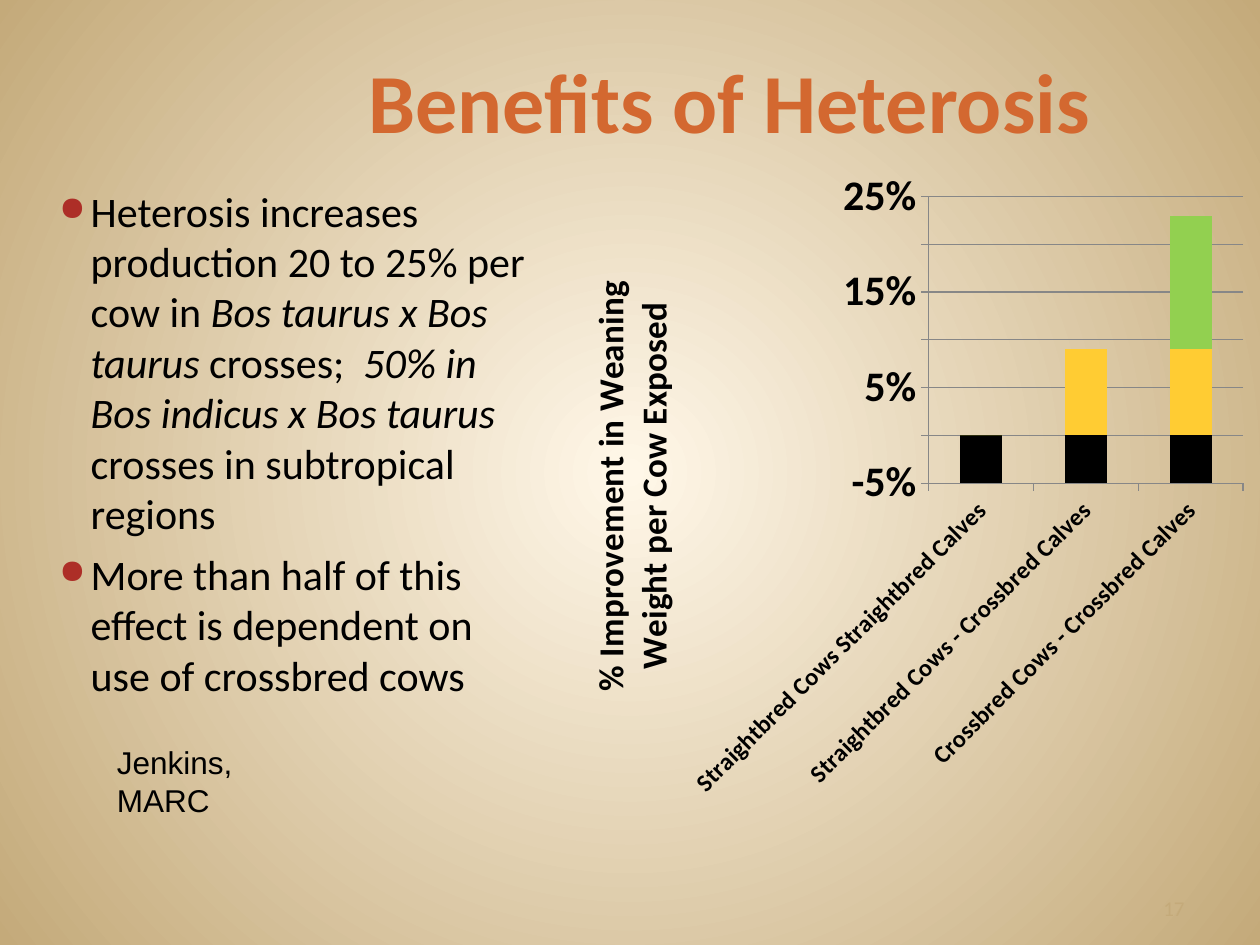
from dataclasses import dataclass

from pptx import Presentation
from pptx.chart.data import CategoryChartData
from pptx.dml.color import RGBColor as RGB
from pptx.enum.chart import XL_AXIS_CROSSES as Crosses
from pptx.enum.chart import XL_CHART_TYPE as ChartType
from pptx.enum.chart import XL_TICK_LABEL_POSITION as LabelPos
from pptx.enum.chart import XL_TICK_MARK as Tick
from pptx.enum.text import MSO_ANCHOR as Anchor
from pptx.enum.text import PP_ALIGN as Align
from pptx.oxml import parse_xml
from pptx.oxml.ns import nsdecls, qn
from pptx.util import Inches, Pt


@dataclass(frozen=True)
class Theme:
    """Colours, fonts and type sizes of the slide."""
    centre: RGB = RGB.from_string("FFF7E8")
    edge: RGB = RGB.from_string("C4AA7A")
    title: RGB = RGB.from_string("D36830")
    text: RGB = RGB.from_string("000000")
    grid: RGB = RGB.from_string("878787")
    bullet: str = "AD2E27"
    font: str = "Calibri"
    source_font: str = "Arial"
    title_size: int = 48
    body_size: int = 24
    source_size: int = 18
    number_size: int = 12
    value_size: int = 24
    axis_title_size: int = 20
    category_size: int = 14


@dataclass(frozen=True)
class Box:
    """A rectangle in inches."""
    x: float
    y: float
    w: float
    h: float

    def emu(self) -> tuple:
        """Return left, top, width and height as lengths."""
        return tuple(Inches(v) for v in (self.x, self.y, self.w, self.h))


@dataclass(frozen=True)
class Span:
    """A stretch of body text, upright or italic."""
    text: str
    italic: bool = False


@dataclass(frozen=True)
class Series:
    """One layer of the stacked columns."""
    name: str
    values: tuple
    color: str


THEME = Theme()
BULLETS = (
    (
        Span("Heterosis increases production 20 to 25% per cow in "),
        Span("Bos taurus x Bos taurus ", True),
        Span("crosses; "),
        Span(" 50% in Bos indicus x Bos taurus ", True),
        Span("crosses in subtropical regions"),
    ),
    (Span("More than half of this effect is dependent on use of crossbred cows"),),
)
CATEGORIES = (
    "Straightbred Cows Straightbred Calves",
    "Straightbred Cows - Crossbred Calves",
    "Crossbred Cows - Crossbred Calves",
)
SERIES = (
    Series("Series 1", (-0.05, -0.05, -0.05), "000000"),
    Series("Series 2", (0, 0.09, 0.09), "FFCC33"),
    Series("Series 3", (0, 0, 0.14), "92D050"),
)


def style_font(font, size: int, color: RGB, name: str = THEME.font, bold: bool = False) -> None:
    """Set the face, size, colour and weight of a font."""
    font.name, font.size, font.bold = name, Pt(size), bold
    font.color.rgb = color


def paint_background(s) -> None:
    """Fill the background with a gradient that spreads from the centre."""
    fill = s.background.fill
    fill.gradient()
    for stop, color, pos in zip(fill.gradient_stops, (THEME.centre, THEME.edge), (0, 1)):
        stop.color.rgb, stop.position = color, pos
    lin = next(s._element.iter(qn("a:lin")))
    lin.getparent().replace(lin, parse_xml(
        f'<a:path {nsdecls("a")} path="circle">'
        '<a:fillToRect l="50000" t="50000" r="50000" b="50000"/></a:path>'))


def add_title(s, text: str, box: Box) -> None:
    """Place and format the title placeholder."""
    sp = s.shapes.title
    sp.left, sp.top, sp.width, sp.height = box.emu()
    tf = sp.text_frame
    tf.vertical_anchor = Anchor.MIDDLE
    p = tf.paragraphs[0]
    p.alignment = Align.CENTER
    r = p.add_run()
    r.text = text
    style_font(r.font, THEME.title_size, THEME.title, bold=True)


def add_label(s, text: str, box: Box, size: int, color: RGB, name: str, align: Align) -> None:
    """Add a small wrapped text box."""
    tf = s.shapes.add_textbox(*box.emu()).text_frame
    tf.word_wrap = True
    p = tf.paragraphs[0]
    p.alignment = align
    r = p.add_run()
    r.text = text
    style_font(r.font, size, color, name)


def add_bullets(s, bullets: tuple, box: Box) -> None:
    """Add the bulleted body text."""
    tf = s.shapes.add_textbox(*box.emu()).text_frame
    tf.word_wrap = True
    tf.margin_left = tf.margin_right = tf.margin_top = tf.margin_bottom = Inches(0.05)
    for i, spans in enumerate(bullets):
        p = tf.add_paragraph() if i else tf.paragraphs[0]
        p.space_after = Pt(6)
        pPr = p._p.get_or_add_pPr()
        pPr.set("marL", str(Inches(0.25)))
        pPr.set("indent", str(Inches(-0.25)))
        for xml in (f'<a:buClr {nsdecls("a")}><a:srgbClr val="{THEME.bullet}"/></a:buClr>',
                    f'<a:buSzPct {nsdecls("a")} val="80000"/>',
                    f'<a:buChar {nsdecls("a")} char="●"/>'):
            pPr.append(parse_xml(xml))
        for span in spans:
            r = p.add_run()
            r.text = span.text
            style_font(r.font, THEME.body_size, THEME.text)
            r.font.italic = span.italic


def layout_xml(target: str, **parts: float):
    """Return a manual chart layout with the given fractions."""
    inner = '<c:layoutTarget val="inner"/>' if target == "inner" else ""
    modes = '<c:xMode val="edge"/><c:yMode val="edge"/>'
    values = "".join(f'<c:{k} val="{v}"/>' for k, v in parts.items())
    return parse_xml(f'<c:layout {nsdecls("c")}><c:manualLayout>{inner}{modes}{values}'
                     '</c:manualLayout></c:layout>')


def set_layout(parent, layout, after: str = "") -> None:
    """Put a layout first in its parent or after the named child."""
    for old in parent.findall(qn("c:layout")):
        parent.remove(old)
    parent.insert(parent.index(parent.find(qn(after))) + 1 if after else 0, layout)


def add_chart(s, box: Box) -> None:
    """Add the stacked column chart of weaning weight gains."""
    data = CategoryChartData(number_format="0%")
    data.categories = CATEGORIES
    for item in SERIES:
        data.add_series(item.name, item.values)
    chart = s.shapes.add_chart(ChartType.COLUMN_STACKED, *box.emu(), data).chart
    chart.has_legend = chart.has_title = False
    style_font(chart.font, 10, THEME.text)
    plot = chart.plots[0]
    plot.overlap, plot.gap_width, plot.vary_by_categories = 100, 150, False
    for series, item in zip(plot.series, SERIES):
        series.invert_if_negative = False
        series.format.fill.solid()
        series.format.fill.fore_color.rgb = RGB.from_string(item.color)

    cat, val = chart.category_axis, chart.value_axis
    for axis, size in ((cat, THEME.category_size), (val, THEME.value_size)):
        style_font(axis.tick_labels.font, size, THEME.text, bold=True)
        axis.major_tick_mark, axis.minor_tick_mark = Tick.OUTSIDE, Tick.NONE
        axis.format.line.color.rgb = THEME.grid
    cat.tick_label_position = LabelPos.LOW
    cat._element.find(qn("c:txPr")).find(qn("a:bodyPr")).set("rot", "-2700000")
    val.minimum_scale, val.maximum_scale, val.major_unit = -0.05, 0.25, 0.05
    val.crosses = Crosses.MINIMUM
    val.has_major_gridlines = True
    val.major_gridlines.format.line.color.rgb = THEME.grid
    val.tick_labels.number_format, val.tick_labels.number_format_is_linked = "0%", False

    tf = val.axis_title.text_frame
    r = tf.paragraphs[0].add_run()
    r.text = "% Improvement in Weaning Weight per Cow Exposed"
    style_font(r.font, THEME.axis_title_size, THEME.text, bold=True)
    tf._txBody.find(qn("a:bodyPr")).set("rot", "-5400000")
    set_layout(val.axis_title._element, layout_xml("outer", x=0.05, y=0.18), "c:tx")
    set_layout(chart._chartSpace.chart.plotArea, layout_xml("inner", x=0.54, y=0.06, w=0.44, h=0.44))


def main() -> None:
    """Build the slide and save it."""
    prs = Presentation()
    prs.slide_width, prs.slide_height = Inches(10), Inches(7.5)
    s = prs.slides.add_slide(prs.slide_layouts[5])
    paint_background(s)
    add_label(s, "Jenkins, MARC", Box(0.83, 5.85, 1.82, 0.4),
              THEME.source_size, THEME.text, THEME.source_font, Align.LEFT)
    add_title(s, "Benefits of Heterosis", Box(2, 0.17, 7.58, 1.25))
    add_bullets(s, BULLETS, Box(0.42, 1.42, 3.83, 5.17))
    add_chart(s, Box(4.31, 1.25, 5.67, 5.17))
    add_label(s, "17", Box(8.5, 7.06, 1, 0.3),
              THEME.number_size, THEME.edge, THEME.font, Align.RIGHT)
    prs.save("out.pptx")


if __name__ == "__main__":
    main()
